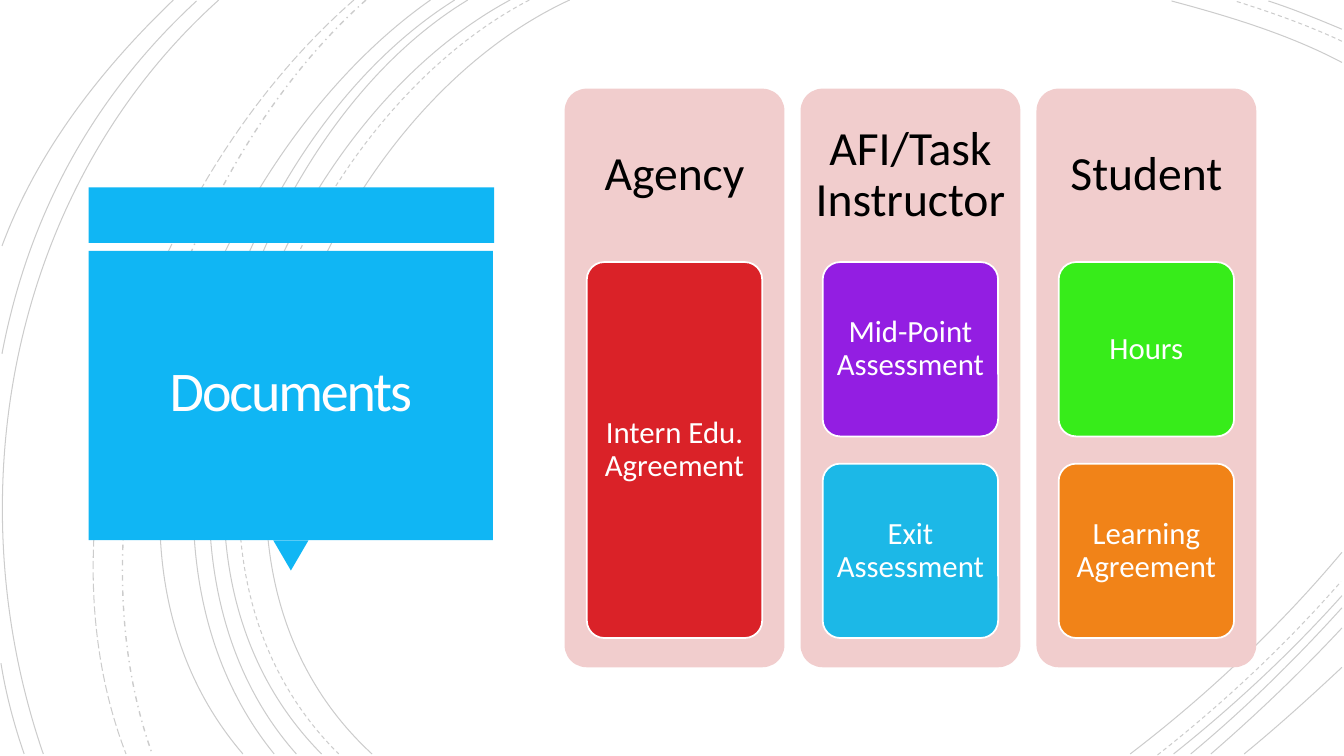
from dataclasses import dataclass

from lxml.etree import SubElement
from pptx import Presentation
from pptx.dml.color import RGBColor
from pptx.enum.dml import MSO_LINE as Dash
from pptx.enum.shapes import MSO_SHAPE as Preset
from pptx.enum.text import MSO_ANCHOR as Anchor, PP_ALIGN as Align
from pptx.oxml.ns import qn
from pptx.util import Inches, Pt

FONT = "Calibri"
WHITE, BLACK, SKY, PINK = "FFFFFF", "000000", "10B6F4", "F1CDCD"
ARC_OPACITY = 20


@dataclass(frozen=True)
class Grid:
    """Columns and rows of a fixed pitch, in inches, from one corner."""
    left: float
    top: float
    column: float
    row: float

    def place(self, column: float, row: float, width: float, height: float) -> tuple:
        return (Inches(self.left + column * self.column), Inches(self.top + row * self.row),
                Inches(width), Inches(height))


@dataclass(frozen=True)
class Arc:
    """A cubic curve: start, two controls and end."""
    points: tuple
    dash: Dash = Dash.SOLID
    weight: float = 0.75


@dataclass(frozen=True)
class Tile:
    label: str
    fill: str
    row: int = 0
    rows: int = 1


@dataclass(frozen=True)
class Panel:
    heading: str
    tiles: tuple


PAGE = Grid(0, 0, 1, 1)
PANELS_GRID = Grid(5.6, 0.88, 2.34, 5.74)
TILES_GRID = Grid(5.82, 2.6, 2.34, 2)
PANEL_WIDTH, PANEL_HEIGHT, HEADING_HEIGHT = 2.18, 5.74, 1.72
TILE_WIDTH, TILE_HEIGHT = 1.74, 1.73

ARCS = (
    Arc(((5.65, 0), (3.15, 1.15), (1.43, 5.4), (3.69, 7.48))),
    Arc(((13.31, 0.62), (12.78, 0.34), (12.18, 0.16), (11.62, 0.01))),
    Arc(((11.21, 7.48), (11.97, 6.9), (12.69, 6.22), (13.31, 5.48))),
    Arc(((5.25, 0), (2.85, 1.25), (1.23, 5.37), (3.36, 7.48)), Dash.DASH),
    Arc(((13.31, 0.41), (12.97, 0.25), (12.6, 0.12), (12.25, 0.01)), Dash.DASH),
    Arc(((11.48, 7.49), (12.13, 6.98), (12.75, 6.4), (13.3, 5.77)), Dash.DASH),
    Arc(((5.06, 0), (2.7, 1.27), (1.1, 5.37), (3.19, 7.48))),
    Arc(((13.31, 0.29), (13.07, 0.19), (12.83, 0.09), (12.58, 0.01))),
    Arc(((11.64, 7.48), (12.23, 7.01), (12.8, 6.48), (13.31, 5.91))),
    Arc(((4.64, 0), (2.44, 1.33), (1.1, 5.41), (2.94, 7.48))),
    Arc(((11.81, 7.48), (12.34, 7.04), (12.84, 6.55), (13.31, 6.03))),
    Arc(((4.51, 0), (2.31, 1.38), (0.97, 5.33), (2.72, 7.48))),
    Arc(((12.01, 7.48), (12.46, 7.09), (12.9, 6.67), (13.31, 6.23))),
    Arc(((4.27, 0), (2.17, 1.47), (0.53, 5.29), (2.41, 7.48))),
    Arc(((12.34, 7.48), (12.67, 7.21), (12.99, 6.92), (13.31, 6.62))),
    Arc(((3.63, 0), (1.76, 1.66), (0.65, 5.09), (1.51, 7.48)), Dash.DASH_DOT, 1),
    Arc(((3.51, 0), (1.57, 1.69), (0.29, 4.99), (1.25, 7.48)), Dash.LONG_DASH),
    Arc(((2.17, 0), (0.11, 1.85), (-0.46, 4.9), (0.43, 7.48))),
    Arc(((1.95, 0.01), (0.92, 0.96), (0.28, 2.14), (0.02, 3.51))),
    Arc(((0.01, 6.58), (0.06, 6.89), (0.14, 7.19), (0.24, 7.48))),
    Arc(((1.72, 0), (1, 0.69), (0.37, 1.5), (0.02, 2.44))),
)

PANELS = (
    Panel("Agency", (Tile("Intern Edu. Agreement", "DA2228", rows=2),)),
    Panel("AFI/Task Instructor", (Tile("Mid-Point Assessment", "931EE2"),
                                  Tile("Exit Assessment", "1CB8E7", row=1))),
    Panel("Student", (Tile("Hours", "37EC1A"),
                      Tile("Learning Agreement", "F18318", row=1))),
)


def paint(color_format, color: str) -> None:
    color_format.rgb = RGBColor.from_string(color)


def bend(shape) -> None:
    """Turn the three straight segments of a freeform into one cubic curve."""
    outline = shape._element.find(".//" + qn("a:path"))
    segments = outline.findall(qn("a:lnTo"))
    curve = SubElement(outline, qn("a:cubicBezTo"))
    for segment in segments:
        curve.append(segment[0])
        outline.remove(segment)


def draw_arc(page, arc: Arc) -> None:
    start, *rest = ((Inches(x), Inches(y)) for x, y in arc.points)
    builder = page.shapes.build_freeform(*start)
    builder.add_line_segments(rest, close=False)
    shape = builder.convert_to_shape()
    bend(shape)
    shape.shadow.inherit = False
    shape.fill.background()
    paint(shape.line.color, BLACK)
    shape.line.width = Pt(arc.weight)
    shape.line.dash_style = arc.dash
    tint = shape._element.spPr.find(".//" + qn("a:srgbClr"))
    SubElement(tint, qn("a:alpha")).set("val", str(ARC_OPACITY * 1000))


def draw_shape(page, preset: Preset, place: tuple, fill: str, outline: str = ""):
    shape = page.shapes.add_shape(preset, *place)
    shape.shadow.inherit = False
    shape.fill.solid()
    paint(shape.fill.fore_color, fill)
    if outline:
        paint(shape.line.color, outline)
        shape.line.width = Pt(1.25)
    else:
        shape.line.fill.background()
    if preset == Preset.ROUNDED_RECTANGLE:
        shape.adjustments[0] = 0.1
    return shape


def write(box, text: str, *, size: float, color: str, inset: float,
          leading: float = 0.9, tracking: float = 0) -> None:
    """Centre one paragraph both ways in a shape or text box."""
    frame = box.text_frame
    frame.word_wrap = True
    frame.vertical_anchor = Anchor.MIDDLE
    frame.margin_left = frame.margin_right = Inches(inset)
    frame.margin_top = frame.margin_bottom = Inches(inset)
    para = frame.paragraphs[0]
    para.alignment = Align.CENTER
    para.line_spacing = leading
    span = para.add_run()
    span.text = text
    span.font.name = FONT
    span.font.size = Pt(size)
    paint(span.font.color, color)
    if tracking:
        span.font._element.set("spc", str(round(tracking * 100)))


def draw_title(page) -> None:
    draw_shape(page, Preset.RECTANGLE, PAGE.place(0.88, 1.86, 4.02, 0.55), SKY)
    pointer = draw_shape(page, Preset.ISOSCELES_TRIANGLE, PAGE.place(2.71, 5.36, 0.35, 0.3), SKY)
    pointer.rotation = 180
    draw_shape(page, Preset.RECTANGLE, PAGE.place(0.88, 2.49, 4.01, 2.87), SKY)
    title = page.shapes.add_textbox(*PAGE.place(0.97, 2.57, 3.83, 2.69))
    write(title, "Documents", size=40, color="FFFEFF", inset=0.25, leading=0.85, tracking=-1.5)


def draw_panel(page, column: int, panel: Panel) -> None:
    draw_shape(page, Preset.ROUNDED_RECTANGLE,
               PANELS_GRID.place(column, 0, PANEL_WIDTH, PANEL_HEIGHT), PINK)
    heading = page.shapes.add_textbox(*PANELS_GRID.place(column, 0, PANEL_WIDTH, HEADING_HEIGHT))
    write(heading, panel.heading, size=34, color=BLACK, inset=0.14)
    for tile in panel.tiles:
        height = TILE_HEIGHT + (tile.rows - 1) * TILES_GRID.row
        box = draw_shape(page, Preset.ROUNDED_RECTANGLE,
                         TILES_GRID.place(column, tile.row, TILE_WIDTH, height), tile.fill, WHITE)
        write(box, tile.label, size=22, color=WHITE, inset=0.06)


def main() -> None:
    deck = Presentation()
    deck.slide_width, deck.slide_height = Inches(13.33), Inches(7.5)
    page = deck.slides.add_slide(deck.slide_layouts[6])
    for arc in ARCS:
        draw_arc(page, arc)
    draw_title(page)
    for column, panel in enumerate(PANELS):
        draw_panel(page, column, panel)
    deck.save("out.pptx")


if __name__ == "__main__":
    main()
